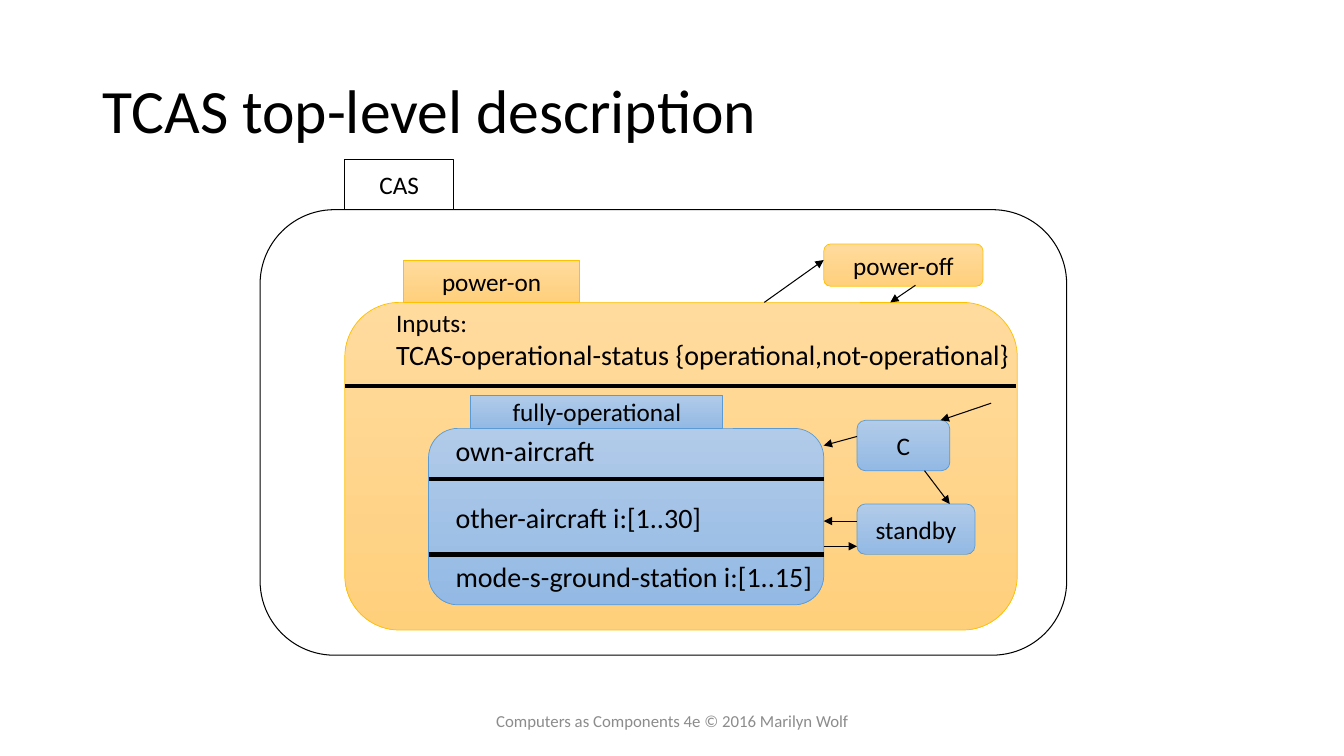
from lxml import etree
from pptx import Presentation
from pptx.dml.color import RGBColor
from pptx.enum.shapes import MSO_CONNECTOR, MSO_SHAPE
from pptx.enum.text import MSO_ANCHOR as ANCHOR, PP_ALIGN as ALIGN
from pptx.oxml.ns import qn
from pptx.util import Inches, Pt

# Fill colours, line colour, line width
WHITE = (("FFFFFF",), "000000", 0.75)
ORANGE = (("FFDB9E", "FFD07C"), "FFC000", 0.5)
BLUE = (("B1CBE9", "93B9E4"), "5B9BD5", 0.5)


def rgb(value):
    return RGBColor.from_string(value)


class StateChart:
    font = "Calibri"
    ink = "000000"

    def __init__(self, slide):
        self.s = slide

    def set_text(self, tf, text, sizes, color=ink, align=ALIGN.LEFT,
                 anchor=ANCHOR.TOP, wrap=False):
        """Fill a text frame; sizes holds one point size per paragraph."""
        tf.text = text
        tf.word_wrap = wrap
        tf.vertical_anchor = anchor
        for p, size in zip(tf.paragraphs, sizes):
            p.alignment = align
            for r in p.runs:
                r.font.name = self.font
                r.font.size = Pt(size)
                r.font.color.rgb = rgb(color)

    def title(self, text, box):
        sp = self.s.shapes.title
        sp.left, sp.top, sp.width, sp.height = map(Inches, box)
        self.set_text(sp.text_frame, text, [44], anchor=ANCHOR.MIDDLE, wrap=True)
        sp.text_frame.paragraphs[0].line_spacing = 0.9

    def box(self, box, style, text="", kind=MSO_SHAPE.ROUNDED_RECTANGLE):
        sp = self.s.shapes.add_shape(kind, *map(Inches, box))
        sp.shadow.inherit = False
        colors, edge, width = style
        if len(colors) == 1:
            sp.fill.solid()
            sp.fill.fore_color.rgb = rgb(colors[0])
        else:
            sp.fill.gradient()
            sp.fill.gradient_angle = 270
            for i, stop in enumerate(sp.fill.gradient_stops):
                stop.color.rgb = rgb(colors[i])
                stop.position = i
        sp.line.color.rgb = rgb(edge)
        sp.line.width = Pt(width)
        if text:
            self.set_text(sp.text_frame, text, [18], align=ALIGN.CENTER,
                          anchor=ANCHOR.MIDDLE)

    def tab(self, box, style, text):
        self.box(box, style, text, MSO_SHAPE.RECTANGLE)

    def label(self, box, text, sizes, **options):
        sp = self.s.shapes.add_textbox(*map(Inches, box))
        self.set_text(sp.text_frame, text, sizes, **options)

    def line(self, x1, y1, x2, y2, width=0.75, arrow=False):
        c = self.s.shapes.add_connector(
            MSO_CONNECTOR.STRAIGHT, *map(Inches, (x1, y1, x2, y2)))
        c.line.color.rgb = rgb(self.ink)
        c.line.width = Pt(width)
        sp_pr = c.element.spPr
        if arrow:
            etree.SubElement(sp_pr.find(qn("a:ln")), qn("a:tailEnd"),
                             type="triangle")
        etree.SubElement(sp_pr, qn("a:effectLst"))


def main():
    prs = Presentation()
    prs.slide_width, prs.slide_height = Inches(13.33), Inches(7.5)
    chart = StateChart(prs.slides.add_slide(prs.slide_layouts[5]))
    chart.title("TCAS top-level description", (0.92, 0.4, 11.5, 1.45))

    # Outer CAS state
    chart.box((2.58, 2.08, 8, 4.42), WHITE)
    chart.tab((3.42, 1.58, 1.08, 0.5), WHITE, "CAS")
    chart.box((8.17, 2.42, 1.58, 0.42), ORANGE, "power-off")

    # Power-on state with its inputs
    chart.box((3.42, 3, 6.67, 3.25), ORANGE)
    chart.line(3.42, 3.83, 10.08, 3.83, width=3)
    chart.tab((4, 2.58, 1.75, 0.42), ORANGE, "power-on")
    chart.label((3.83, 3, 6.35, 0.74),
                "Inputs:\nTCAS-operational-status {operational,not-operational}",
                [18, 20])

    # Fully-operational state and its neighbours
    chart.box((4.25, 4.25, 3.92, 1.75), BLUE)
    chart.tab((4.67, 3.92, 2.5, 0.33), BLUE, "fully-operational")
    chart.box((8.5, 4.17, 0.92, 0.5), BLUE, "C")
    chart.box((8.5, 5, 1.17, 0.5), BLUE, "standby")
    for y in (4.75, 5.5):
        chart.line(4.25, y, 8.17, y, width=3)
    for y, width, text in ((4.25, 1.6, "own-aircraft"),
                           (4.92, 2.68, "other-aircraft i:[1..30]"),
                           (5.5, 3.77, "mode-s-ground-station i:[1..15]")):
        chart.label((4.42, y, width, 0.44), text, [20])

    # Transitions
    for ends in ((7.58, 3, 8.17, 2.58),
                 (9.08, 2.83, 8.83, 3),
                 (9.83, 4, 9.33, 4.17),
                 (8.5, 4.33, 8.17, 4.42),
                 (9.17, 4.67, 9.42, 5),
                 (8.5, 5.17, 8.17, 5.17),
                 (8.17, 5.42, 8.5, 5.42)):
        chart.line(*ends, arrow=True)

    # Footer
    chart.label((4.42, 6.95, 4.5, 0.4),
                "Computers as Components 4e © 2016 Marilyn Wolf", [12],
                color="8C8C8C", align=ALIGN.CENTER, anchor=ANCHOR.MIDDLE,
                wrap=True)
    prs.save("out.pptx")


if __name__ == "__main__":
    main()
